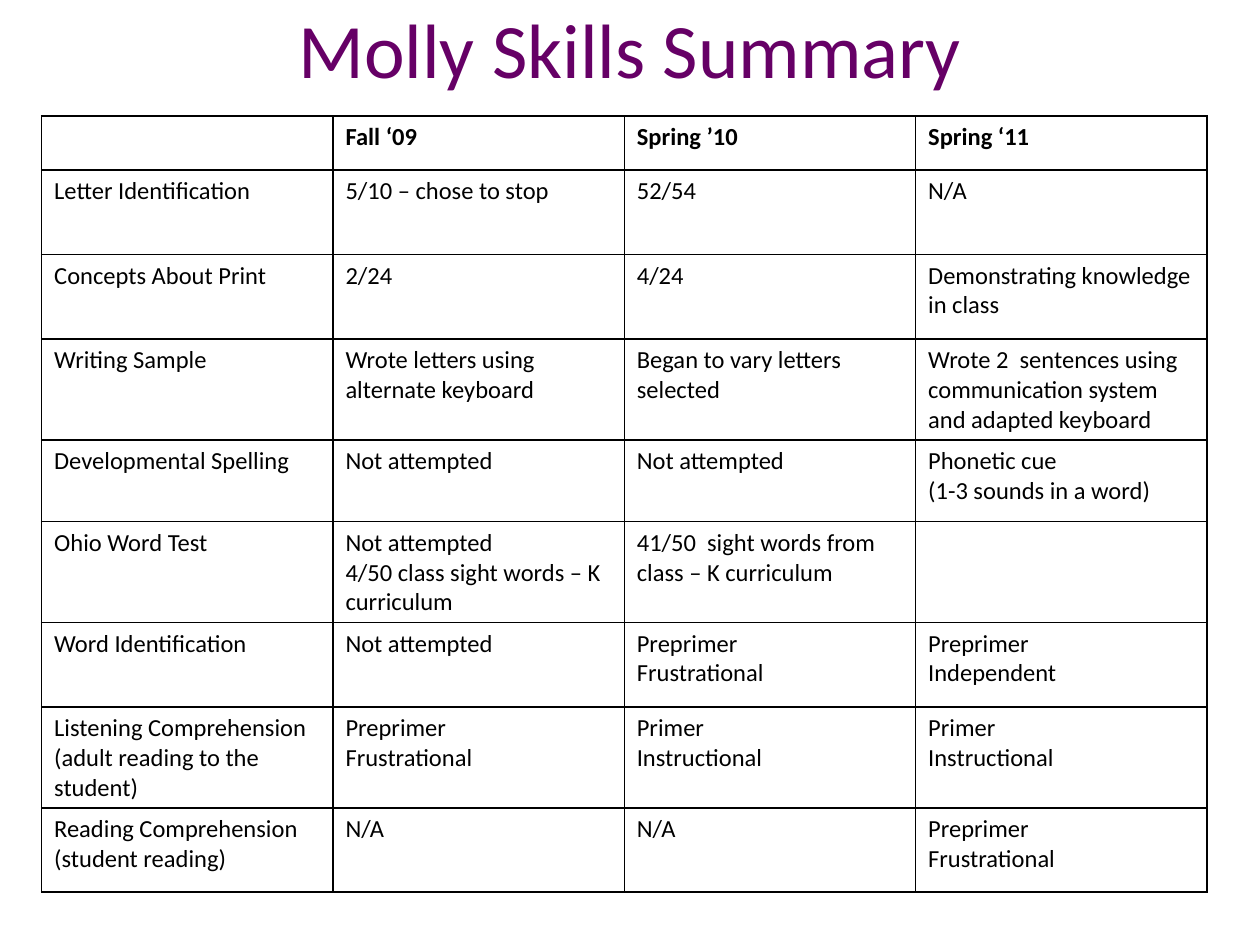
import pptx
import pptx.util
import pptx.dml.color
import pptx.enum.text
import pptx.oxml
import pptx.oxml.ns

Inches, Pt = pptx.util.Inches, pptx.util.Pt
RGB = pptx.dml.color.RGBColor
align = pptx.enum.text.PP_ALIGN
anchor = pptx.enum.text.MSO_ANCHOR

hues = {"title": "660066", "ink": "000000"}
heights = [0.43, 0.67, 0.67, 0.73, 0.65, 0.73, 0.67, 0.73, 0.67]
rows = [
    ["", "Fall ‘09", "Spring ’10", "Spring ‘11"],
    ["Letter Identification", "5/10 – chose to stop", "52/54", "N/A"],
    ["Concepts About Print", "2/24", "4/24", "Demonstrating knowledge in class"],
    ["Writing Sample", "Wrote letters using alternate keyboard",
     "Began to vary letters selected",
     "Wrote 2  sentences using communication system and adapted keyboard"],
    ["Developmental Spelling", "Not attempted", "Not attempted",
     "Phonetic cue\n(1-3 sounds in a word)"],
    ["Ohio Word Test", "Not attempted\n4/50 class sight words – K curriculum",
     "41/50  sight words from class – K curriculum", ""],
    ["Word Identification", "Not attempted", "Preprimer\nFrustrational",
     "Preprimer\nIndependent"],
    ["Listening Comprehension\n(adult reading to the student)",
     "Preprimer\nFrustrational", "Primer\nInstructional", "Primer\nInstructional"],
    ["Reading Comprehension (student reading)", "N/A", "N/A",
     "Preprimer\nFrustrational"],
]


def style(frame, hue, **form):
    """Set the font of every paragraph in a text frame."""
    for para in frame.paragraphs:
        para.font.color.rgb = RGB.from_string(hue)
        for key, value in form.items():
            setattr(para.font, key, value)


def rule(cell):
    """Draw a thin line on all four sides of a cell."""
    props = cell._tc.get_or_add_tcPr()
    for at, side in enumerate(["lnL", "lnR", "lnT", "lnB"]):
        props.insert(at, pptx.oxml.parse_xml(
            f'<a:{side} {pptx.oxml.ns.nsdecls("a")} w="{Pt(1)}"><a:solidFill>'
            f'<a:srgbClr val="{hues["ink"]}"/></a:solidFill></a:{side}>'))


deck = pptx.Presentation()
deck.slide_width, deck.slide_height = Inches(10), Inches(7.5)
slide = deck.slides.add_slide(deck.slide_layouts[6])

box = slide.shapes.add_textbox(Inches(0.5), Inches(-0.25), Inches(9), Inches(1.25))
frame = box.text_frame
frame.word_wrap = True
frame.vertical_anchor = anchor.MIDDLE
frame.text = "Molly Skills Summary"
frame.paragraphs[0].alignment = align.CENTER
style(frame, hues["title"], name="Calibri", size=Pt(44))

grid = slide.shapes.add_table(
    len(rows), len(rows[0]), Inches(0.33), Inches(0.92),
    Inches(9.25), Inches(sum(heights))).table
grid.first_row = grid.horz_banding = False
for r, (height, row) in enumerate(zip(heights, rows)):
    grid.rows[r].height = Inches(height)
    for c, text in enumerate(row):
        cell = grid.cell(r, c)
        cell.text = text
        cell.fill.background()
        style(cell.text_frame, hues["ink"], name="Calibri", size=Pt(14), bold=r == 0)
        rule(cell)

deck.save("out.pptx")
